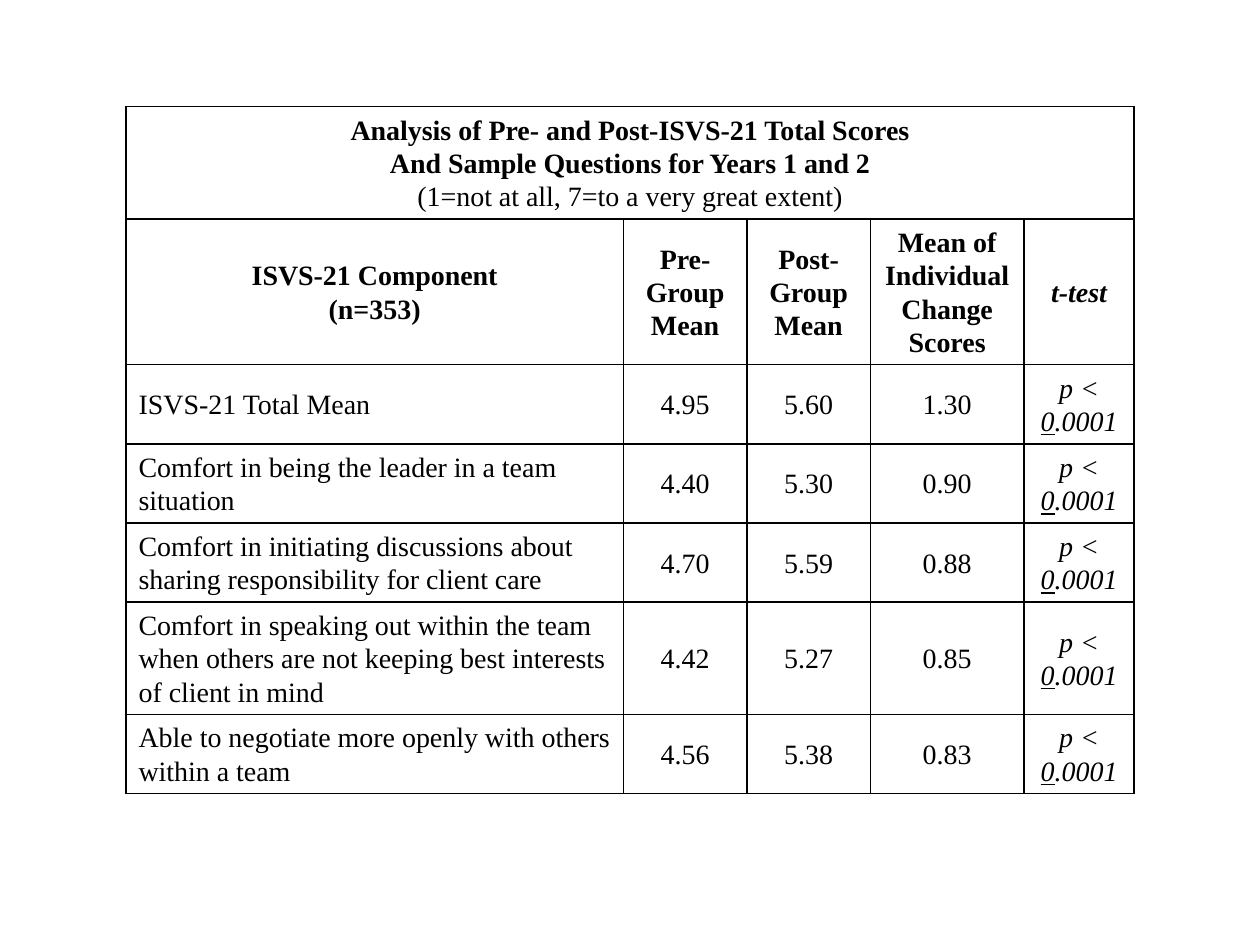
from dataclasses import dataclass

from lxml import etree
from pptx import Presentation
from pptx.dml.color import RGBColor
from pptx.enum.text import MSO_ANCHOR, PP_ALIGN
from pptx.oxml.ns import qn
from pptx.util import Pt

LEFT, CENTER = PP_ALIGN.LEFT, PP_ALIGN.CENTER
TOP, MIDDLE = MSO_ANCHOR.TOP, MSO_ANCHOR.MIDDLE
BLANK_LAYOUT = 6


@dataclass(frozen=True)
class Theme:
    font: str = "Times New Roman"
    size: float = 16
    line_spacing: float = 1.07
    border_width: float = 1
    ink: str = "000000"


THEME = Theme()

TITLE = [
    "Analysis of Pre- and Post-ISVS-21 Total Scores",
    "And Sample Questions for Years 1 and 2",
    "(1=not at all, 7=to a very great extent)",
]
HEADERS = [
    ["ISVS-21 Component", "(n=353)"],
    ["Pre- Group Mean"],
    ["Post- Group Mean"],
    ["Mean of Individual Change Scores"],
    ["t-test"],
]
SCORES = [
    ("ISVS-21 Total Mean", "4.95", "5.60", "1.30"),
    ("Comfort in being the leader in a team situation", "4.40", "5.30", "0.90"),
    ("Comfort in initiating discussions about sharing responsibility for client care",
     "4.70", "5.59", "0.88"),
    ("Comfort in speaking out within the team when others are not keeping best "
     "interests of client in mind", "4.42", "5.27", "0.85"),
    ("Able to negotiate more openly with others within a team", "4.56", "5.38", "0.83"),
]
COLUMN_WIDTHS = [284.2, 70.6, 70.6, 87.8, 63]
ROW_HEIGHTS = [64, 83, 45, 45, 45, 64, 45]


def style_cell(cell):
    """Clear the fill and draw a thin line on all four sides."""
    properties = cell._tc.get_or_add_tcPr()
    for side in ("a:lnL", "a:lnR", "a:lnT", "a:lnB"):
        line = etree.SubElement(properties, qn(side), w=str(Pt(THEME.border_width)))
        fill = etree.SubElement(line, qn("a:solidFill"))
        etree.SubElement(fill, qn("a:srgbClr"), val=THEME.ink)
    cell.fill.background()


def format_span(span, bold=False, italic=False, underline=False):
    font = span.font
    font.name, font.size = THEME.font, Pt(THEME.size)
    font.color.rgb = RGBColor.from_string(THEME.ink)
    font.bold, font.italic, font.underline = bold, italic, underline


def format_para(para, align=CENTER):
    para.alignment = align
    para.line_spacing = THEME.line_spacing


def write_cell(cell, lines, align=CENTER, anchor=MIDDLE, bold=False, italic=False):
    cell.vertical_anchor = anchor
    cell.text_frame.text = "\n".join(lines)
    for para in cell.text_frame.paragraphs:
        format_para(para, align)
        for span in para.runs:
            format_span(span, bold, italic)


def write_p_value(cell, own_line):
    """Write the p value with its zero underlined."""
    cell.vertical_anchor = MIDDLE
    frame = cell.text_frame
    para = frame.paragraphs[0]
    format_para(para)
    format_span(para.add_run(), italic=True)
    para.runs[0].text = "p <" if own_line else "p < "
    if own_line:
        para = frame.add_paragraph()
        format_para(para)
    else:
        # A hanging first line sets the sign left of centre
        para._p.get_or_add_pPr().set("indent", str(-Pt(16)))
    for text, underline in (("0", True), (".0001", False)):
        span = para.add_run()
        span.text = text
        format_span(span, italic=True, underline=underline)


def add_score_table(page, left, top, width, height):
    frame = page.shapes.add_table(len(ROW_HEIGHTS), len(COLUMN_WIDTHS),
                                  Pt(left), Pt(top), Pt(width), Pt(height))
    table = frame.table
    table.first_row = table.horz_banding = False
    for column, share in zip(table.columns, COLUMN_WIDTHS):
        column.width = Pt(share * width / sum(COLUMN_WIDTHS))
    for row, share in zip(table.rows, ROW_HEIGHTS):
        row.height = Pt(share * height / sum(ROW_HEIGHTS))
    for cell in table.iter_cells():
        style_cell(cell)

    # Title row across all columns
    title = table.cell(0, 0)
    title.merge(table.cell(0, len(COLUMN_WIDTHS) - 1))
    write_cell(title, TITLE, anchor=TOP, bold=True)
    title.text_frame.paragraphs[-1].runs[0].font.bold = False

    # Column headings
    for index, lines in enumerate(HEADERS):
        write_cell(table.cell(1, index), lines, bold=True, italic=lines == ["t-test"])

    # Scores
    for index, (component, *means) in enumerate(SCORES):
        row = index + 2
        write_cell(table.cell(row, 0), [component], align=LEFT)
        for column, mean in enumerate(means, start=1):
            write_cell(table.cell(row, column), [mean])
        write_p_value(table.cell(row, len(means) + 1), own_line=index == 0)


def main():
    deck = Presentation()
    deck.slide_width, deck.slide_height = Pt(720), Pt(540)
    page = deck.slides.add_slide(deck.slide_layouts[BLANK_LAYOUT])
    add_score_table(page, 72, 61, sum(COLUMN_WIDTHS), sum(ROW_HEIGHTS))
    deck.save("out.pptx")


if __name__ == "__main__":
    main()
